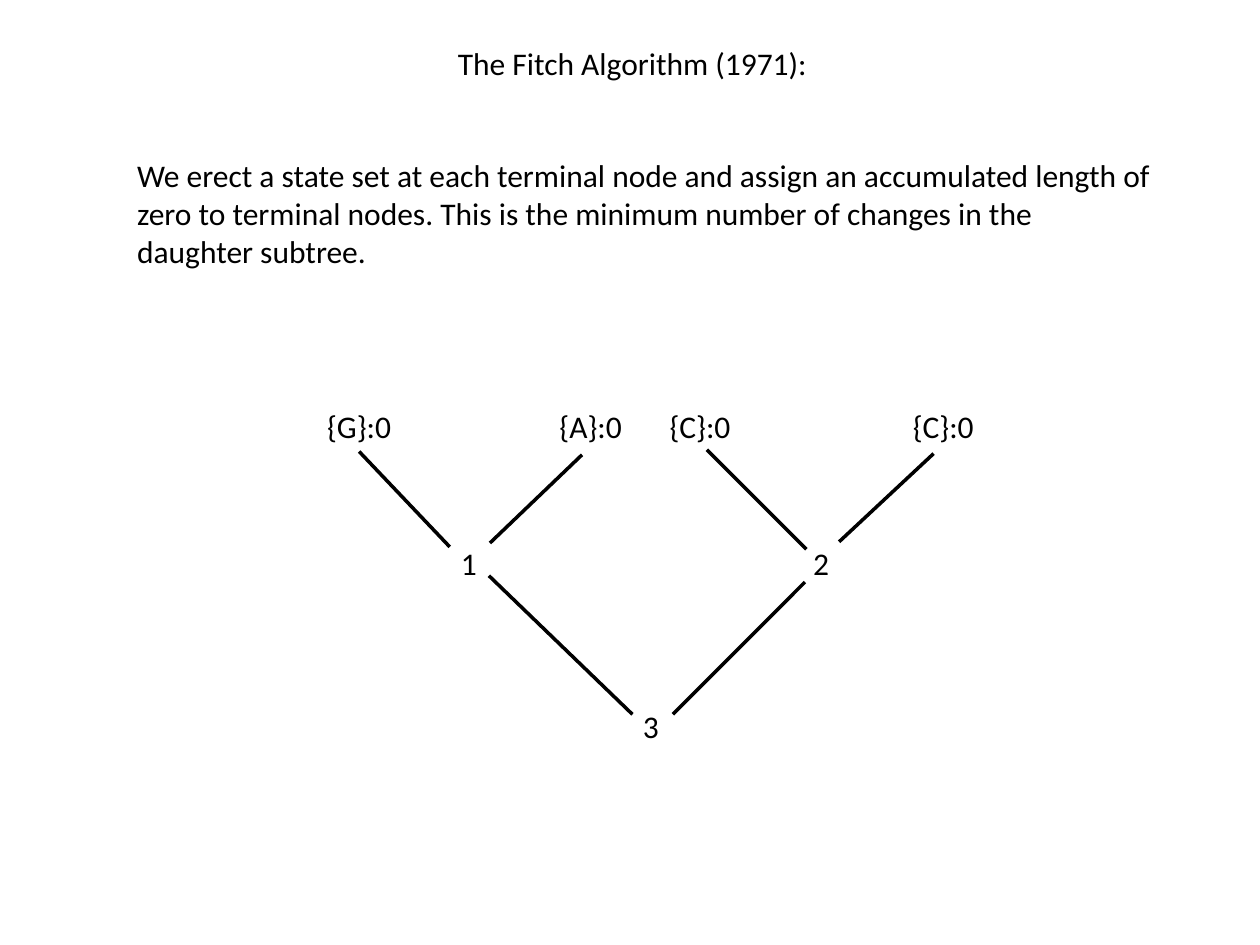
"""Build a slide showing the first step of the Fitch algorithm on a four-leaf tree."""
from dataclasses import dataclass

from lxml import etree
from pptx import Presentation
from pptx.dml.color import RGBColor
from pptx.enum import shapes, text
from pptx.oxml import ns
from pptx.util import Pt


@dataclass(frozen=True)
class Theme:
    font: str = "Calibri"
    size: Pt = Pt(18)
    ink: RGBColor = RGBColor(0, 0, 0)
    paper: RGBColor = RGBColor(255, 255, 255)
    branch_width: Pt = Pt(2)


THEME = Theme()


def write(box, lines, align, wrap):
    frame = box.text_frame
    frame.word_wrap = wrap
    frame.auto_size = text.MSO_AUTO_SIZE.NONE
    frame.vertical_anchor = text.MSO_ANCHOR.TOP
    para = frame.paragraphs[0]
    para.alignment = align
    for index, line in enumerate(lines):
        if index:
            para.add_line_break()
        span = para.add_run()
        span.text = line
        span.font.name = THEME.font
        span.font.size = THEME.size
        span.font.color.rgb = THEME.ink


deck = Presentation()
deck.slide_width, deck.slide_height = Pt(720), Pt(540)
page = deck.slides.add_slide(deck.slide_layouts[5])
page.background.fill.solid()
page.background.fill.fore_color.rgb = THEME.paper

title = page.shapes.title
title.left, title.top, title.width, title.height = Pt(253.4), Pt(21.6), Pt(216), Pt(29)
write(title, ["The Fitch Algorithm (1971):"], text.PP_ALIGN.CENTER, True)

explanation = page.shapes.add_textbox(Pt(71.3), Pt(85.7), Pt(599.8), Pt(72.7))
write(
    explanation,
    [
        "We erect a state set at each terminal node and assign an accumulated length of",
        "zero to terminal nodes. This is the minimum number of changes in the",
        "daughter subtree.",
    ],
    text.PP_ALIGN.LEFT,
    True,
)

tree = page.shapes.add_group_shape()

LEAF_TOP, INNER_TOP, ROOT_TOP = 229, 307.4, 400.3
LEAF_WIDTH, INNER_WIDTH, NODE_HEIGHT = 51, 23.8, 29
nodes = [
    ("{G}:0", 205.2, LEAF_TOP, LEAF_WIDTH),
    ("{A}:0", 337.5, LEAF_TOP, LEAF_WIDTH),
    ("{C}:0", 400, LEAF_TOP, LEAF_WIDTH),
    ("{C}:0", 539, LEAF_TOP, LEAF_WIDTH),
    ("1", 268, INNER_TOP, INNER_WIDTH),
    ("2", 469.2, INNER_TOP, INNER_WIDTH),
    ("3", 372, ROOT_TOP, INNER_WIDTH),
]
node_boxes = []
for label, center, top, width in nodes:
    box = tree.shapes.add_textbox(Pt(center - width / 2), Pt(top), Pt(width), Pt(NODE_HEIGHT))
    write(box, [label], text.PP_ALIGN.CENTER, False)
    node_boxes.append(box)

branches = [
    (205.9, 258.5, 257, 312.5),
    (332.6, 259.9, 280, 310.3),
    (403.9, 257, 460.8, 313.9),
    (533.5, 259.2, 479.5, 309.6),
    (279.4, 329, 361.4, 408.2),
    (460, 332.6, 384.5, 408.2),
]
branch_lines = []
for ends in branches:
    branch = tree.shapes.add_connector(shapes.MSO_CONNECTOR.STRAIGHT, *map(Pt, ends))
    branch.line.color.rgb = THEME.ink
    branch.line.width = THEME.branch_width
    etree.SubElement(branch._element.spPr, ns.qn("a:effectLst"))
    branch_lines.append(branch)
branch_lines[0].begin_connect(node_boxes[0], 2)

deck.save("out.pptx")
